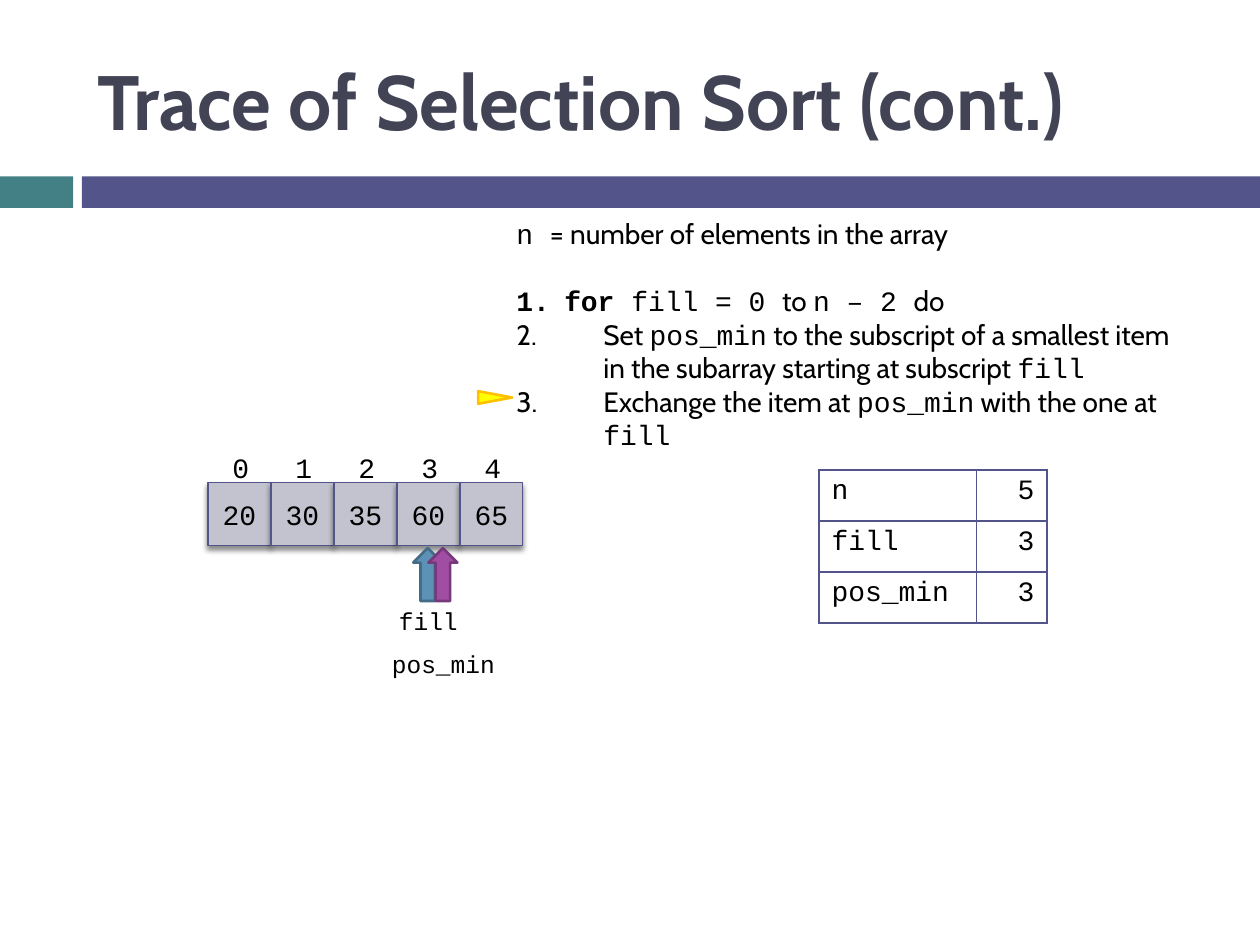
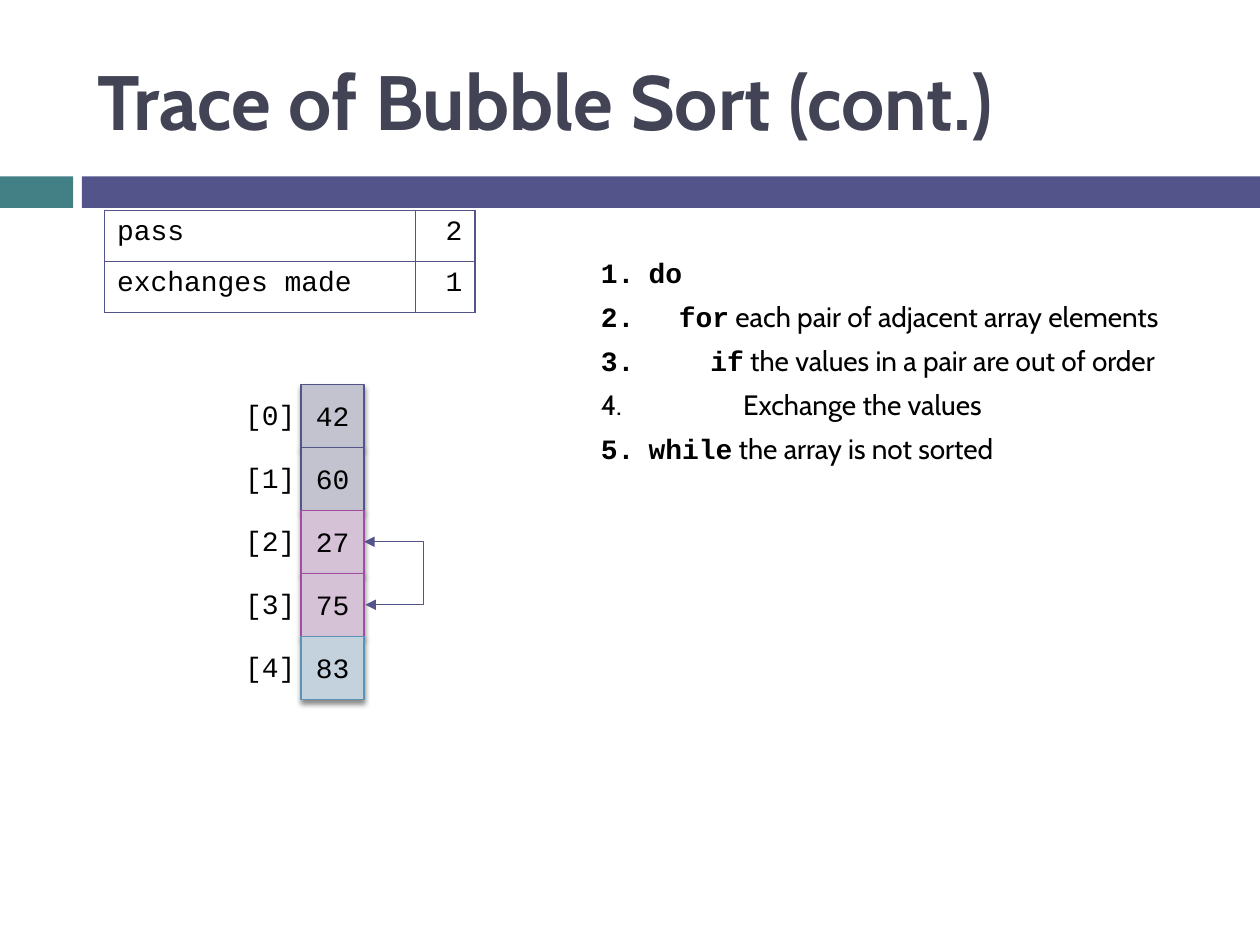
import dataclasses

import lxml.etree
import pptx
import pptx.dml.color
import pptx.enum.shapes
import pptx.enum.text
import pptx.oxml
import pptx.oxml.ns
import pptx.util

SHAPE = pptx.enum.shapes.MSO_SHAPE
ALIGN = pptx.enum.text.PP_ALIGN
MIDDLE = pptx.enum.text.MSO_ANCHOR.MIDDLE
qn = pptx.oxml.ns.qn


@dataclasses.dataclass(frozen=True)
class Theme:
    prose: str = "Cabin"
    code: str = "Courier New"
    title_size: int = 44
    body_size: int = 16
    pointer_size: int = 14
    hairline: float = 0.79
    outline: float = 1.5
    ink: str = "000000"
    title: str = "424456"
    teal: str = "438086"
    indigo: str = "53548A"
    # (fill, line) pairs
    waiting: tuple = ("C3C3CF", "53548A")
    compared: tuple = ("D6C2D7", "A04DA3")
    placed: tuple = ("C4D2DE", "5C92B5")
    fill_pointer: tuple = ("5C92B5", "446C86")
    min_pointer: tuple = ("A04DA3", "763979")
    step_marker: tuple = ("FFFF00", "FFC000")


def rgb(value):
    return pptx.dml.color.RGBColor.from_string(value)


def child(parent, tag, **attributes):
    """Append a DrawingML element."""
    return lxml.etree.SubElement(parent, qn(f"a:{tag}"), attributes)


class Deck:
    """Places elements on a grid of 20 columns by 15 rows."""

    COLUMNS, ROWS = 20, 15

    def __init__(self, theme):
        self.theme = theme
        self.file = pptx.Presentation()
        self.file.slide_width = pptx.util.Inches(10)
        self.file.slide_height = pptx.util.Inches(7.5)
        self.slide = None

    def x(self, columns):
        return round(self.file.slide_width * columns / self.COLUMNS)

    def y(self, rows):
        return round(self.file.slide_height * rows / self.ROWS)

    def box(self, col, row, width, height):
        return self.x(col), self.y(row), self.x(width), self.y(height)

    def style(self, run, kind="code", size=None, color=None):
        """Kinds are 'code', 'prose' and 'keyword' (bold code)."""
        run.font.name = self.theme.prose if kind == "prose" else self.theme.code
        run.font.bold = kind == "keyword"
        run.font.size = pptx.util.Pt(size or self.theme.body_size)
        run.font.color.rgb = rgb(color or self.theme.ink)

    def put_text(self, frame, text, align, size=None):
        frame.text = text
        paragraph = frame.paragraphs[0]
        paragraph.alignment = align
        self.style(paragraph.runs[0], size=size)

    def new_slide(self, heading):
        self.slide = self.file.slides.add_slide(self.file.slide_layouts[5])
        # Bands
        self.shape(SHAPE.RECTANGLE, (0, 2.8, 1.16, 0.5), (self.theme.teal, None))
        self.shape(SHAPE.RECTANGLE, (1.3, 2.8, 18.7, 0.5), (self.theme.indigo, None))
        # Title
        title = self.slide.shapes.title
        title.left, title.top, title.width, title.height = self.box(1.34, 0.5, 17.84, 2.16)
        title.text_frame.text = heading
        title.text_frame.vertical_anchor = MIDDLE
        paragraph = title.text_frame.paragraphs[0]
        paragraph.alignment = ALIGN.LEFT
        self.style(paragraph.runs[0], "prose", self.theme.title_size, self.theme.title)
        paragraph.runs[0].font.bold = True

    def shape(self, preset, place, colors, weight=None, rotation=0):
        shape = self.slide.shapes.add_shape(preset, *self.box(*place))
        fill, line = colors
        shape.rotation = rotation
        shape.shadow.inherit = False
        shape.fill.solid()
        shape.fill.fore_color.rgb = rgb(fill)
        if line:
            shape.line.color.rgb = rgb(line)
            shape.line.width = pptx.util.Pt(weight or self.theme.outline)
        else:
            shape.line.fill.background()
        return shape

    def array_cell(self, col, row, value, colors):
        cell = self.shape(SHAPE.RECTANGLE, (col, row, 1, 1), colors, self.theme.hairline)
        effects = cell._element.spPr.find(qn("a:effectLst"))
        shadow = child(effects, "outerShdw", blurRad=str(pptx.util.Pt(3)),
                       dist=str(pptx.util.Pt(2.4)), dir="5400000", rotWithShape="0")
        child(child(shadow, "srgbClr", val="000000"), "alpha", val="45000")
        cell.text_frame.vertical_anchor = MIDDLE
        self.put_text(cell.text_frame, str(value), ALIGN.CENTER)

    def text_box(self, place):
        frame = self.slide.shapes.add_textbox(*self.box(*place)).text_frame
        frame.word_wrap = True
        frame.auto_size = pptx.enum.text.MSO_AUTO_SIZE.SHAPE_TO_FIT_TEXT
        return frame

    def label(self, place, text, size=None):
        self.put_text(self.text_box(place), text, ALIGN.CENTER, size)

    def pointer(self, arrow_col, label_row, name, colors):
        self.shape(SHAPE.DOWN_ARROW, (arrow_col, 8.7, 0.46, 0.84), colors, rotation=180)
        self.label((arrow_col - 0.83, label_row, 2.14, 0.68), name, self.theme.pointer_size)

    def algorithm(self, place, steps):
        """Each step is (hanging indent in columns or None, gap after, runs)."""
        frame = self.text_box(place)
        for number, (indent, gap, runs) in enumerate(steps):
            paragraph = frame.add_paragraph() if number else frame.paragraphs[0]
            paragraph.space_after = pptx.util.Pt(gap)
            for kind, text in runs:
                run = paragraph.add_run()
                run.text = text
                self.style(run, kind)
            if indent:
                properties = paragraph._p.get_or_add_pPr()
                properties.set("marL", str(self.x(indent)))
                properties.set("indent", str(-self.x(indent)))
                child(properties, "buAutoNum", type="arabicPeriod")

    def variables(self, col, row, widths, values):
        """Table of variable names and their current values."""
        height = 0.81
        table = self.slide.shapes.add_table(
            len(values), 2, *self.box(col, row, sum(widths), height * len(values))).table
        table.first_row = table.horz_banding = False
        for column, width in zip(table.columns, widths):
            column.width = self.x(width)
        for line, pair in zip(table.rows, values.items()):
            line.height = self.y(height)
            for cell, content, align in zip(line.cells, pair, (ALIGN.LEFT, ALIGN.RIGHT)):
                self.put_text(cell.text_frame, str(content), align)
                cell.fill.background()
                self.cell_borders(cell)

    def cell_borders(self, cell):
        properties = cell._tc.get_or_add_tcPr()
        for position, side in enumerate(("lnL", "lnR", "lnT", "lnB")):
            border = child(properties, side, w=str(pptx.util.Pt(1)))
            child(child(border, "solidFill"), "srgbClr", val=self.theme.indigo)
            properties.insert(position, border)

    def exchange_arrow(self, col, first_row, second_row, reach):
        """Bracket with a head at each end, bulging `reach` columns to the right."""
        span = 0.02
        bracket = self.slide.shapes.add_connector(
            pptx.enum.shapes.MSO_CONNECTOR.ELBOW,
            self.x(col), self.y(first_row), self.x(col + span), self.y(second_row))
        bracket.line.color.rgb = rgb(self.theme.indigo)
        bracket.line.width = pptx.util.Pt(self.theme.hairline)
        properties = bracket._element.spPr
        geometry = properties.find(qn("a:prstGeom"))
        guides = geometry.find(qn("a:avLst"))
        if guides is None:
            guides = child(geometry, "avLst")
        child(guides, "gd", name="adj1", fmla=f"val {round(reach / span * 100000)}")
        for end in ("headEnd", "tailEnd"):
            child(properties.find(qn("a:ln")), end, type="triangle")
        child(properties, "effectLst")


def selection_sort(deck):
    theme = deck.theme
    deck.new_slide("Trace of Selection Sort (cont.)")

    # Array with its subscripts
    for index, value in enumerate((20, 30, 35, 60, 65)):
        deck.array_cell(3.3 + index, 7.66, value, theme.waiting)
    for index in range(5):
        deck.label((3.34 + index, 7.06, 0.96, 0.74), str(index))

    # Variables and pointers
    deck.variables(13, 7.46, (2.5, 1.12), {"n": 5, "fill": 3, "pos_min": 3})
    deck.pointer(6.56, 9.52, "fill", theme.fill_pointer)
    deck.pointer(6.8, 10.2, "pos_min", theme.min_pointer)

    # Algorithm with the current step marked
    deck.shape(SHAPE.ISOSCELES_TRIANGLE, (7.76, 6.04, 0.2, 0.54), theme.step_marker, rotation=90)
    deck.algorithm((8, 3.34, 11.16, 3.98), [
        (None, 19, [("code", "n "), ("prose", "= number of elements in the array")]),
        (0.76, 0, [("keyword", "for"), ("code", " fill = 0 "), ("prose", "to "),
                   ("code", "n – 2 "), ("prose", "do")]),
        (1.38, 0, [("prose", "Set "), ("code", "pos_min"),
                   ("prose", " to the subscript of a smallest item in the subarray"
                             " starting at subscript "), ("code", "fill")]),
        (1.38, 0, [("prose", "Exchange the item at "), ("code", "pos_min"),
                   ("prose", " with the one at "), ("code", "fill")]),
    ])


def bubble_sort(deck):
    theme = deck.theme
    deck.new_slide("Trace of Bubble Sort (cont.)")

    # Algorithm
    deck.algorithm((9.34, 3.96, 10.34, 4.28), [
        (0.76, 6, [("keyword", "do")]),
        (1.24, 6, [("keyword", "for"), ("prose", " each pair of adjacent array elements")]),
        (1.74, 6, [("keyword", "if"), ("prose", " the values in a pair are out of order")]),
        (2.26, 6, [("prose", "Exchange the values")]),
        (0.76, 6, [("keyword", "while"), ("prose", " the array is not sorted")]),
    ])

    # Array with its subscripts
    top = 6.1
    array = [(42, theme.waiting), (60, theme.waiting), (27, theme.compared),
             (75, theme.compared), (83, theme.placed)]
    for index, (value, colors) in enumerate(array):
        deck.array_cell(4.78, top + index, value, colors)
        deck.label((3.56, top + index + 0.12, 1.46, 0.74), f"[{index}]")
    deck.exchange_arrow(5.78, top + 2.5, top + 3.5, 0.96)

    # Variables
    deck.variables(1.66, 3.34, (4.94, 0.94), {"pass": 2, "exchanges made": 1})


def main():
    deck = Deck(Theme())
    selection_sort(deck)
    bubble_sort(deck)
    deck.file.save("out.pptx")


if __name__ == "__main__":
    main()
